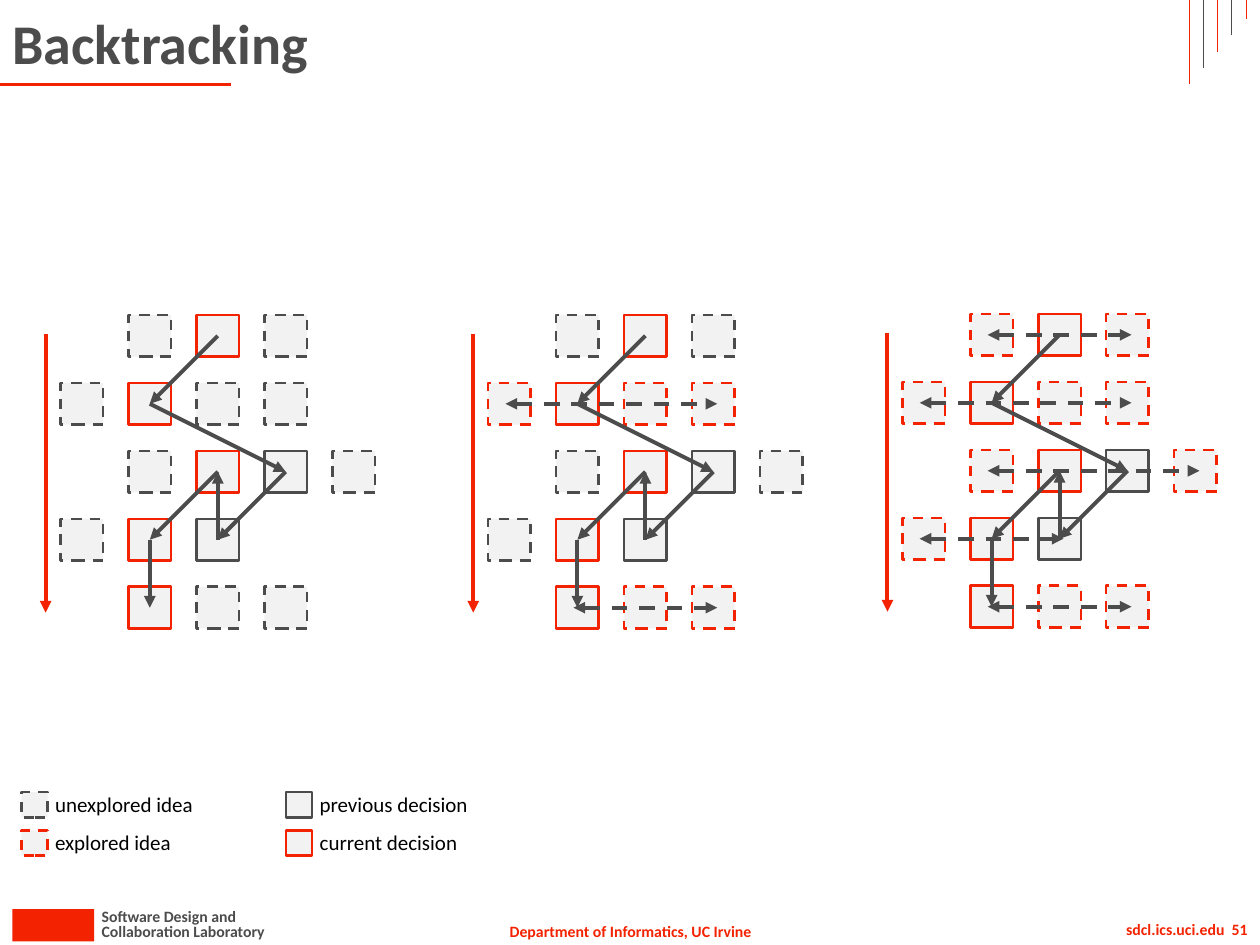
from collections import namedtuple
from dataclasses import dataclass
from itertools import pairwise

from lxml.etree import SubElement as Sub
from pptx import Presentation
from pptx.dml.color import RGBColor as Rgb
from pptx.enum.dml import MSO_LINE_DASH_STYLE as Dash
from pptx.enum.shapes import MSO_CONNECTOR as Conn, MSO_SHAPE as Kind
from pptx.enum.text import MSO_ANCHOR as Anchor, MSO_AUTO_SIZE as Auto, PP_ALIGN as Align
from pptx.oxml.ns import qn
from pptx.util import Cm, Pt

Box = namedtuple("Box", "x y w h")


@dataclass(frozen=True)
class Theme:
    """Colours, font and sizes of the deck."""
    red: Rgb = Rgb.from_string("F32200")
    gray: Rgb = Rgb.from_string("4C4C4C")
    pale: Rgb = Rgb.from_string("F2F2F2")
    black: Rgb = Rgb.from_string("000000")
    font: str = "Calibri"
    title: int = 32
    label: int = 12
    small: int = 9
    thin: float = 0.5
    edge: float = 1.5
    bold: float = 2.25


THEME = Theme()
IDEAS = {
    "u": ("unexplored idea", THEME.gray, True),
    "e": ("explored idea", THEME.red, True),
    "p": ("previous decision", THEME.gray, False),
    "c": ("current decision", THEME.red, False),
}
ROUTE = [(2, 0), (1, 1), (3, 2), (2, 3), (2, 2), (1, 3), (1, 4)]
PANELS = [
    (1.22, 6.35, [".ucu.", "ucuu.", ".ucpu", "ucp..", ".cuu."], []),
    (9.84, 6.35, [".ucu.", "ecee.", ".ucpu", "ucp..", ".cee."],
     [(1, 0, 3), (4, 1, 3)]),
    (18.19, 6.33, [".ece.", "ecee.", ".ecpe", "ecp..", ".cee."],
     [(0, 1, 3), (1, 0, 3), (2, 1, 4), (3, 0, 2), (4, 1, 3)]),
]


def style(para, size, color, bold=False, align=Align.LEFT):
    """Set the font and alignment of a paragraph."""
    font = para.font
    font.name, font.size, font.bold = THEME.font, Pt(size), bold
    font.color.rgb = color
    para.alignment = align


def write(slide, box, text, size, color, bold=False, align=Align.LEFT):
    """Add one line of text."""
    frame = slide.shapes.add_textbox(*map(Cm, box)).text_frame
    frame.word_wrap = False
    frame.text = text
    style(frame.paragraphs[0], size, color, bold, align)


def rule(slide, start, end, color, width, dash=False, ends=()):
    """Add a line with arrowheads at the named ends."""
    line = slide.shapes.add_connector(Conn.STRAIGHT, *map(Cm, (*start, *end)))
    line.line.color.rgb = color
    line.line.width = Pt(width)
    if dash:
        line.line.dash_style = Dash.DASH
    props = line._element.spPr
    for end_tag in ends:
        Sub(props.find(qn("a:ln")), qn(f"a:{end_tag}"), type="triangle")
    Sub(props, qn("a:effectLst"))


def block(slide, box, fill):
    """Add a flat rectangle."""
    cell = slide.shapes.add_shape(Kind.RECTANGLE, *map(Cm, box))
    cell.shadow.inherit = False
    cell.fill.solid()
    cell.fill.fore_color.rgb = fill
    cell.line.fill.background()
    return cell


def idea(slide, box, code):
    """Add the square for one kind of idea."""
    _, color, dash = IDEAS[code]
    edge = block(slide, box, THEME.pale).line
    edge.color.rgb = color
    edge.width = Pt(THEME.edge)
    if dash:
        edge.dash_style = Dash.DASH


def head(slide, box):
    """Place the title, its underline and the corner stripes."""
    title = slide.shapes.title
    title.left, title.top, title.width, title.height = map(
        Cm, (box.x, box.y, box.w - 1.9, box.h))
    frame = title.text_frame
    frame.text = "Backtracking"
    frame.auto_size = Auto.NONE
    frame.vertical_anchor = Anchor.MIDDLE
    style(frame.paragraphs[0], THEME.title, THEME.gray, True)
    base = box.y + box.h
    rule(slide, (box.x, base), (box.x + 4.65, base), THEME.red, THEME.edge)
    for i in range(5):
        x = box.x + box.w - 1.42 + i * 0.285
        color = THEME.gray if i % 2 else THEME.red
        rule(slide, (x, base - i * 0.33), (x, box.y), color, THEME.thin)


def panel(slide, box, rows, spans):
    """Draw a grid of ideas with its route and explored spans."""
    wide, high = 0.86, 0.84
    dx, dy = (box.w - wide) / 4, (box.h - high) / 4

    def mid(col, row):
        """Return the centre of a cell."""
        return box.x + col * dx + wide / 2, box.y + row * dy + high / 2

    for r, row in enumerate(rows):
        for c, code in enumerate(row):
            if code in IDEAS:
                idea(slide, Box(box.x + c * dx, box.y + r * dy, wide, high), code)
    side = box.x - 0.3
    rule(slide, (side, box.y + 0.38), (side, box.y + 6), THEME.red, THEME.bold,
         ends=["tailEnd"])
    for row, first, last in spans:
        (left, y), (right, _) = mid(first, row), mid(last, row)
        rule(slide, (left - 0.08, y), (right + 0.08, y), THEME.gray, THEME.bold,
             True, ["headEnd", "tailEnd"])
    for start, end in pairwise(ROUTE):
        rule(slide, mid(*start), mid(*end), THEME.gray, THEME.bold,
             ends=["tailEnd"])


def legend(slide, box):
    """Place the four kinds of idea in two columns."""
    for i, (code, (text, *_)) in enumerate(IDEAS.items()):
        x = box.x + i // 2 * box.w / 2
        y = box.y + i % 2 * box.h / 2
        idea(slide, Box(x, y, 0.53, 0.51), code)
        write(slide, Box(x + 0.43, y - 0.14, 4, 0.77), text,
              THEME.label, THEME.black)


def foot(slide, box):
    """Place the mark, lab name, department and address."""
    x, y, w, _ = box
    block(slide, Box(x + 0.25, y + 0.35, 1.65, 0.65), THEME.red)
    for i, text in enumerate(["Software Design and", "Collaboration Laboratory"]):
        write(slide, Box(x + 1.8, y + 0.18 + i * 0.3, 4, 0.64), text,
              THEME.small, THEME.gray, True)
    write(slide, Box(x + 9.98, y + 0.48, 5.46, 0.64),
          "Department of Informatics, UC Irvine",
          THEME.small, THEME.red, True, Align.CENTER)
    write(slide, Box(x + w - 5.49, y + 0.43, 5.49, 0.64), "sdcl.ics.uci.edu  51",
          THEME.small, THEME.red, True, Align.RIGHT)


def main():
    """Build and save the slide."""
    deck = Presentation()
    deck.slide_width, deck.slide_height = Cm(25.4), Cm(19.05)
    slide = deck.slides.add_slide(deck.slide_layouts[5])
    foot(slide, Box(0, 17.98, 25.4, 1.07))
    head(slide, Box(0, 0, 25.4, 1.7))
    for x, y, rows, spans in PANELS:
        panel(slide, Box(x, y, 6.34, 6.32), rows, spans)
    legend(slide, Box(0.43, 15.97, 10.67, 1.54))
    deck.save("out.pptx")


if __name__ == "__main__":
    main()
